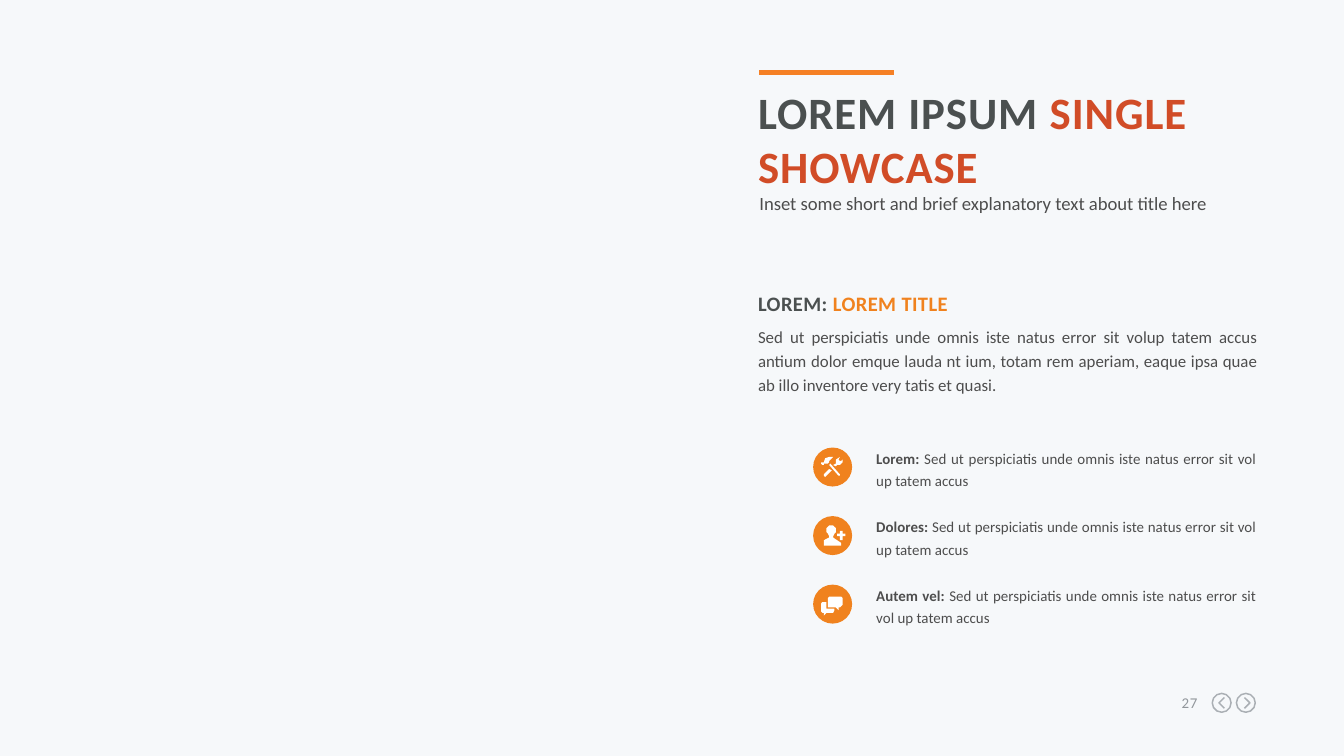
from lxml.etree import SubElement
from pptx import Presentation
from pptx.dml.color import RGBColor
from pptx.enum.shapes import MSO_CONNECTOR, MSO_SHAPE
from pptx.enum.text import PP_ALIGN
from pptx.oxml.ns import qn
from pptx.util import Inches, Pt

DARK, TEXT, ORANGE, RED = "4B5050", "4D4D4D", "F0821E", "D14C27"
GRAY, NUMBER, WHITE = "AAAFB4", "91969B", "FFFFFF"
LEFT, WIDTH = 5.64, 3.71

TITLE = [("LOREM IPSUM ", DARK, True), ("SINGLE SHOWCASE", RED, True)]
SUBTITLE = [("Inset some short and brief explanatory text about title here", TEXT, False)]
HEADING = [("LOREM: ", DARK, True), ("LOREM TITLE", ORANGE, True)]
BODY = [("Sed ut perspiciatis unde omnis iste natus error sit volup tatem accus antium "
         "dolor emque lauda nt ium, totam rem aperiam, eaque ipsa quae ab illo inventore "
         "very tatis et quasi.", TEXT, False)]
ITEM_TEXT = "Sed ut perspiciatis unde omnis iste natus error sit vol up tatem accus"

TOOLS = [
    [(8, 12), (11, 12), (12, 11), (12, 10), (15, 7), (12, 7), (9, 8), (8, 11),
     (6, 11), (6, 12), (7, 13), (8, 13)],
    [(13, 12), (12, 13), (19, 21), (20, 21), (20, 20)],
    [(22, 9), (21, 10), (20, 10), (19, 9), (20, 7), (17, 9), (17, 12), (15, 13),
     (17, 14), (18, 13), (20, 13), (22, 11)],
    [(8, 20), (8, 21), (9, 22), (14, 17), (12, 16)],
]
ADD_USER = [
    [(21, 20), (21, 22), (8, 22), (8, 18), (12, 16), (12, 15), (11, 13), (10, 12),
     (10, 9), (12, 7), (15, 7), (17, 9), (17, 12), (16, 13), (15, 15), (15, 16), (18, 18)],
    [(24, 13), (24, 15), (22, 15), (22, 18), (20, 18), (20, 15), (18, 15), (18, 13),
     (20, 13), (20, 11), (22, 11), (22, 13)],
]
CHAT = [
    [(16, 18), (16, 19), (15, 21), (10, 21), (8, 23), (8, 21), (7, 21), (6, 20),
     (6, 14), (7, 13), (10, 13), (10, 18)],
    [(22, 10), (22, 15), (20, 17), (19, 17), (19, 19), (17, 17), (11, 17), (11, 10),
     (12, 9), (21, 9)],
]
ITEMS = [("Lorem: ", TOOLS), ("Dolores: ", ADD_USER), ("Autem vel: ", CHAT)]
BUTTONS = [(9.02, [(9, 4), (5, 8), (9, 12)]), (9.2, [(6, 4), (10, 8), (6, 12)])]


def color(value):
    return RGBColor.from_string(value)


def paint(shape, fill=None, line=None):
    shape.shadow.inherit = False
    if fill:
        shape.fill.solid()
        shape.fill.fore_color.rgb = color(fill)
    else:
        shape.fill.background()
    if line:
        shape.line.color.rgb = color(line)
        shape.line.width = Pt(0.8)
    else:
        shape.line.fill.background()


def add_text(slide, box, runs, size, line=None, align=None, after=0, spacing=0):
    frame = slide.shapes.add_textbox(*map(Inches, box)).text_frame
    frame.word_wrap = True
    frame.margin_left = frame.margin_right = frame.margin_top = frame.margin_bottom = 0
    paragraph = frame.paragraphs[0]
    paragraph.font.size = Pt(size)
    paragraph.font.name = "Calibri"
    paragraph.alignment = align
    paragraph.space_after = Pt(after)
    if line:
        paragraph.line_spacing = Pt(line)
    for text, shade, bold in runs:
        run = paragraph.add_run()
        run.text = text
        run.font.bold = bold
        run.font.color.rgb = color(shade)
        if spacing:
            run._r.get_or_add_rPr().set("spc", str(spacing))


def add_circle(slide, left, top, size, fill=None, line=None):
    box = map(Inches, (left, top, size, size))
    paint(slide.shapes.add_shape(MSO_SHAPE.OVAL, *box), fill, line)


def add_outline(slide, left, top, contours, fill=None, line=None):
    builder = slide.shapes.build_freeform(*contours[0][0], scale=Inches(0.01))
    for index, contour in enumerate(contours):
        if index:
            builder.move_to(*contour[0])
        builder.add_line_segments(contour[1:], close=bool(fill))
    paint(builder.convert_to_shape(Inches(left), Inches(top)), fill, line)


def main():
    presentation = Presentation()
    presentation.slide_width = Inches(10)
    presentation.slide_height = Inches(10) * 9 // 16
    slide = presentation.slides.add_slide(presentation.slide_layouts[6])
    slide.background.fill.solid()
    slide.background.fill.fore_color.rgb = color("F6F8FA")

    accent = slide.shapes.add_connector(
        MSO_CONNECTOR.STRAIGHT, *map(Inches, (5.65, 0.54, 6.65, 0.54)))
    accent.line.color.rgb = color("F58025")
    accent.line.width = Pt(2.25)
    SubElement(accent._element.spPr, qn("a:effectLst"))

    add_text(slide, (8.68, 5.16, 0.23, 0.13), [("27", NUMBER, False)], 8,
             align=PP_ALIGN.RIGHT, spacing=30)
    for left, chevron in BUTTONS:
        add_circle(slide, left, 5.16, 0.14, line=GRAY)
        add_outline(slide, left, 5.15, [chevron], line=GRAY)

    add_text(slide, (LEFT, 0.63, WIDTH, 0.75), TITLE, 24, spacing=50)
    add_text(slide, (5.65, 1.43, WIDTH, 0.15), SUBTITLE, 10, line=12)
    add_text(slide, (LEFT, 2.11, WIDTH, 0.22), HEADING, 11, line=17, after=6, spacing=20)
    add_text(slide, (LEFT, 2.4, WIDTH, 0.53), BODY, 9, line=13,
             align=PP_ALIGN.JUSTIFY, after=6)

    for index, (label, icon) in enumerate(ITEMS):
        top = 3.33 + index * 0.51
        add_circle(slide, 6.05, top, 0.29, fill=ORANGE)
        add_outline(slide, 6.05, top, icon, fill=WHITE)
        add_text(slide, (6.52, top - 0.02, 2.83, 0.32),
                 [(label, TEXT, True), (ITEM_TEXT, TEXT, False)], 8, line=12,
                 align=PP_ALIGN.JUSTIFY, after=6)

    presentation.save("out.pptx")


if __name__ == "__main__":
    main()
